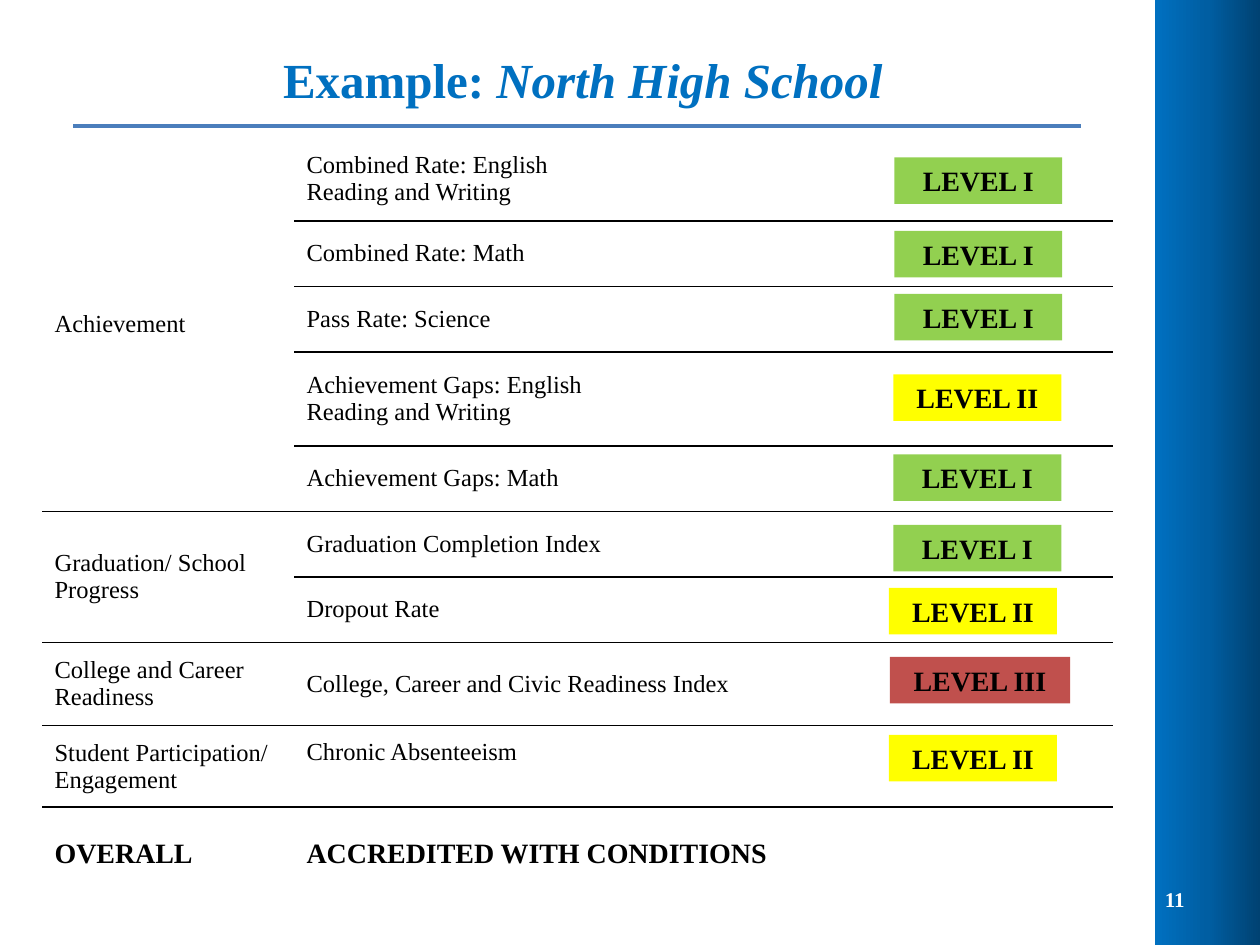
from copy import deepcopy

from lxml import etree
from pptx import Presentation
from pptx import util as u
from pptx.dml.color import RGBColor
from pptx.enum import shapes, text
from pptx.oxml import ns

Pt = u.Pt
FONT = "Times New Roman"
COLORS = {
    "blue": "0070C0", "mid blue": "005EA2", "dark blue": "004272",
    "rule": "4B7EBC", "black": "000000", "white": "FFFFFF",
    "LEVEL I": "92D050", "LEVEL II": "FFFF00", "LEVEL III": "C0504D",
}
TITLE = [("Example: ", False), ("North High School", True)]
# area -> (indicator lines, row height)
AREAS = [
    ("Achievement", [
        (["Combined Rate: English", "Reading and Writing"], 48.2),
        (["Combined Rate: Math"], 37.5),
        (["Pass Rate: Science"], 37.5),
        (["Achievement Gaps: English", "Reading and Writing"], 53.6),
        (["Achievement Gaps: Math"], 37.5)]),
    ("Graduation/ School Progress", [
        (["Graduation Completion Index"], 37.5),
        (["Dropout Rate"], 37.5)]),
    ("College and Career Readiness", [
        (["College, Career and Civic Readiness Index"], 47.5)]),
    ("Student Participation/ Engagement", [
        (["Chronic Absenteeism"], 46.5)]),
    ("OVERALL", [(["ACCREDITED WITH CONDITIONS"], 54)]),
]
COLUMN_WIDTHS = [144, 330, 138]
# level, left, top
BADGES = [
    ("LEVEL I", 511, 90), ("LEVEL I", 511, 132), ("LEVEL I", 511, 168),
    ("LEVEL II", 510.5, 214), ("LEVEL I", 510.5, 259.7),
    ("LEVEL I", 510.5, 300), ("LEVEL II", 508, 336),
    ("LEVEL III", 508.5, 375.4), ("LEVEL II", 508, 420),
]


def rgb(name):
    return RGBColor.from_string(COLORS[name])


def write(frame, paragraphs, size=14, color="black", bold=False,
          align=text.PP_ALIGN.LEFT):
    """Fill a text frame; each paragraph is a list of (words, italic) runs."""
    frame.word_wrap = True
    for i, runs in enumerate(paragraphs):
        paragraph = frame.add_paragraph() if i else frame.paragraphs[0]
        paragraph.alignment = align
        for words, italic in runs:
            run = paragraph.add_run()
            run.text = words
            font = run.font
            font.name, font.size, font.bold = FONT, Pt(size), bold
            font.italic = italic
            font.color.rgb = rgb(color)


def add_text_box(slide, left, top, width, height, paragraphs, **style):
    frame = slide.shapes.add_textbox(
        Pt(left), Pt(top), Pt(width), Pt(height)).text_frame
    frame.vertical_anchor = text.MSO_ANCHOR.MIDDLE
    write(frame, paragraphs, **style)


def add_rectangle(slide, left, top, width, height):
    shape = slide.shapes.add_shape(
        shapes.MSO_SHAPE.RECTANGLE, Pt(left), Pt(top), Pt(width), Pt(height))
    shape.shadow.inherit = False
    shape.line.fill.background()
    return shape


def add_side_band(slide):
    fill = add_rectangle(slide, 660, 0, 60, 540).fill
    fill.gradient()
    fill.gradient_angle = 0
    start, end = fill.gradient_stops
    start.color.rgb, end.color.rgb = rgb("mid blue"), rgb("dark blue")
    stops = slide.shapes[-1].element.spPr.find(".//" + ns.qn("a:gsLst"))
    middle = deepcopy(stops[0])
    middle.set("pos", "50000")
    stops.insert(1, middle)
    start.color.rgb = rgb("blue")


def set_borders(cell, top, bottom):
    """Draw black lines above and below as asked, and none at the sides."""
    properties = cell._tc.get_or_add_tcPr()
    for tag, drawn in (("lnL", False), ("lnR", False),
                       ("lnT", top), ("lnB", bottom)):
        line = etree.SubElement(properties, ns.qn("a:" + tag), w=str(Pt(1)))
        if drawn:
            fill = etree.SubElement(line, ns.qn("a:solidFill"))
            etree.SubElement(fill, ns.qn("a:srgbClr"), val=COLORS["black"])
        else:
            etree.SubElement(line, ns.qn("a:noFill"))


def add_ratings_table(slide):
    heights = [height for _, rows in AREAS for _, height in rows]
    last = len(heights) - 1
    table = slide.shapes.add_table(
        len(heights), len(COLUMN_WIDTHS), Pt(24), Pt(78),
        Pt(sum(COLUMN_WIDTHS)), Pt(sum(heights))).table
    table.first_row = table.horz_banding = False
    for column, width in zip(table.columns, COLUMN_WIDTHS):
        column.width = Pt(width)
    for row, height in zip(table.rows, heights):
        row.height = Pt(height)

    first = 0
    for area, rows in AREAS:
        end = first + len(rows) - 1
        style = dict(size=16, bold=True) if end == last else {}
        if end > first:
            table.cell(first, 0).merge(table.cell(end, 0))
        write(table.cell(first, 0).text_frame, [[(area, False)]], **style)
        for r, (lines, _) in enumerate(rows, first):
            write(table.cell(r, 1).text_frame,
                  [[(line, False)] for line in lines], **style)
            for c in range(len(COLUMN_WIDTHS)):
                cell = table.cell(r, c)
                inside = c == 0 and end > first
                set_borders(cell, r > 0 and not (inside and r > first),
                            r < last and not (inside and first < r < end))
                cell.fill.background()
                cell.vertical_anchor = text.MSO_ANCHOR.MIDDLE
        first = end + 1

    absenteeism = table.cell(last - 1, 1)
    absenteeism.vertical_anchor = text.MSO_ANCHOR.TOP
    absenteeism.margin_top = Pt(7.5)


def add_badge(slide, level, left, top):
    shape = add_rectangle(
        slide, left, top, 103 if level == "LEVEL III" else 96, 26.6)
    shape.fill.solid()
    shape.fill.fore_color.rgb = rgb(level)
    shape.text_frame.vertical_anchor = text.MSO_ANCHOR.TOP
    write(shape.text_frame, [[(level, False)]], size=16, bold=True,
          align=text.PP_ALIGN.CENTER)


def add_title_rule(slide):
    rule = slide.shapes.add_connector(
        shapes.MSO_CONNECTOR.STRAIGHT, Pt(42), Pt(72), Pt(618), Pt(72))
    rule.line.color.rgb = rgb("rule")
    rule.line.width = Pt(2)
    etree.SubElement(rule.element.spPr, ns.qn("a:effectLst"))


def main():
    presentation = Presentation()
    presentation.slide_width, presentation.slide_height = Pt(720), Pt(540)
    slide = presentation.slides.add_slide(presentation.slide_layouts[6])
    add_side_band(slide)
    add_text_box(slide, 36, 6, 594, 78, [TITLE], size=28, color="blue",
                 bold=True, align=text.PP_ALIGN.CENTER)
    add_ratings_table(slide)
    for badge in BADGES:
        add_badge(slide, *badge)
    add_text_box(slide, 654, 499, 30, 29, [[("11", False)]], size=12,
                 color="white", bold=True, align=text.PP_ALIGN.RIGHT)
    add_title_rule(slide)
    presentation.save("out.pptx")


if __name__ == "__main__":
    main()
